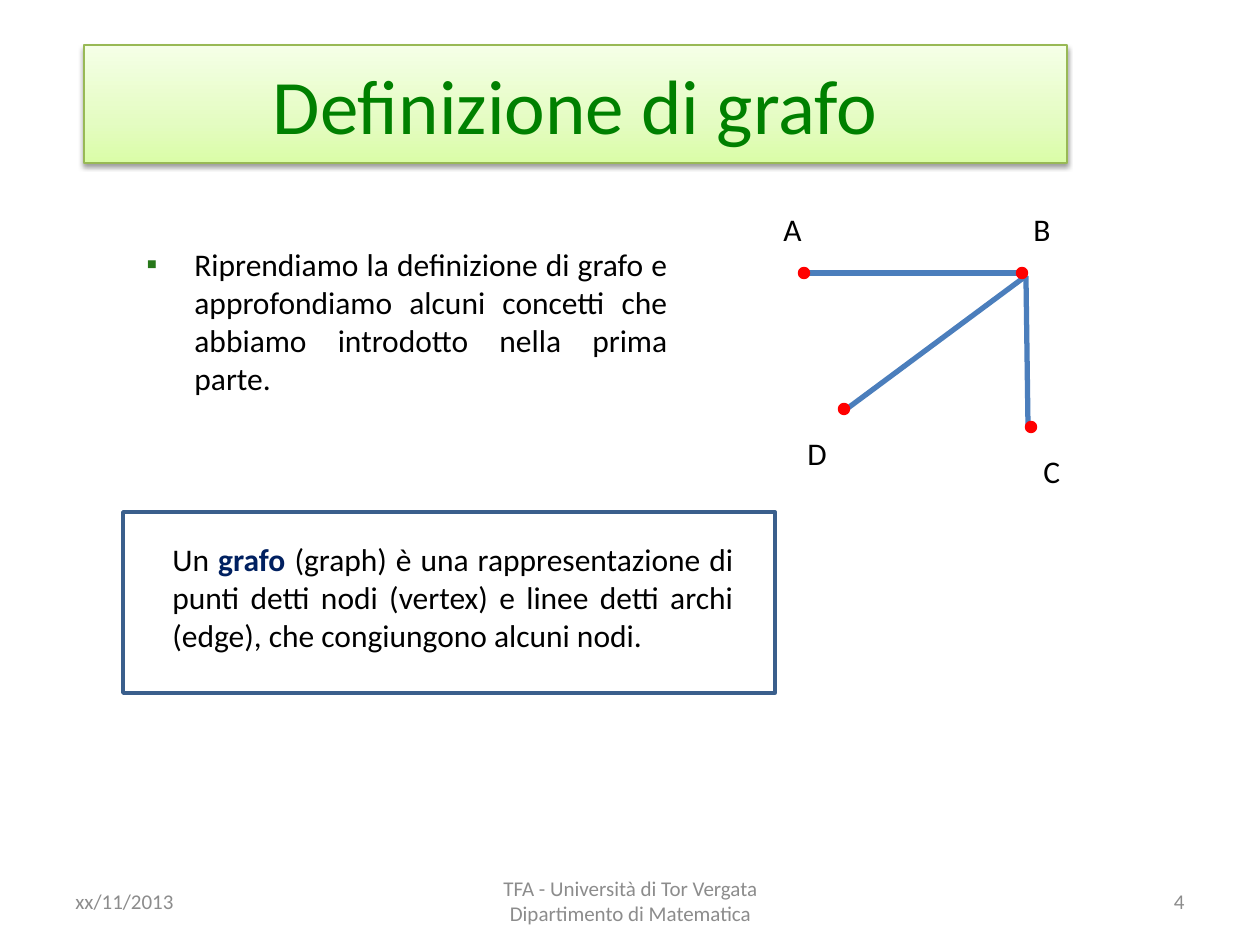
"""Builds the slide that defines a graph, with a small example graph."""
from lxml import etree
from pptx import Presentation
from pptx.dml.color import RGBColor
from pptx.enum.shapes import MSO_CONNECTOR, MSO_SHAPE
from pptx.enum.text import MSO_ANCHOR, MSO_AUTO_SIZE, PP_ALIGN
from pptx.oxml import parse_xml
from pptx.oxml.ns import nsdecls, qn
from pptx.util import Emu, Pt

LEFT, CENTER, RIGHT, JUSTIFY = PP_ALIGN.LEFT, PP_ALIGN.CENTER, PP_ALIGN.RIGHT, PP_ALIGN.JUSTIFY
TOP, MIDDLE = MSO_ANCHOR.TOP, MSO_ANCHOR.MIDDLE
STRAIGHT, RECTANGLE, OVAL = MSO_CONNECTOR.STRAIGHT, MSO_SHAPE.RECTANGLE, MSO_SHAPE.OVAL
TITLE_ONLY = 5
FONT = "Calibri"

COLORS = {
    "text": "000000", "title": "008000", "footer": "8C8C8C", "bullet": "27781A",
    "term": "002060", "edge": "4B7EBC", "frame": "3A5F8C", "node": "FF0000",
    "title line": "98B955",
}
TITLE_STOPS = [(0, "DAFDA7"), (35, "E4FCC2"), (100, "F5FFE7")]

TITLE = ("Definizione di grafo", (84, 45, 983, 118))
INTRO = ("Riprendiamo la definizione di grafo e approfondiamo alcuni concetti "
         "che abbiamo introdotto nella prima parte.", (134, 239, 546, 64))
DEFINITION = [
    ("Un ", "text", False),
    ("grafo ", "term", True),
    ("(graph) è una rappresentazione di punti detti nodi (vertex) e linee detti "
     "archi (edge), che congiungono alcuni nodi.", "text", False),
]
DEFINITION_AREA = (160, 534, 586, 139)
FRAME_AREA = (123, 512, 652, 181)
FOOTERS = [
    ("xx/11/2013", (63, 876, 294, 50), LEFT),
    ("TFA - Università di Tor Vergata\vDipartimento di Matematica", (431, 876, 399, 50), CENTER),
    ("4", (903, 876, 294, 50), RIGHT),
]
LABELS = [("A", 771, 204), ("B", 1021, 204), ("D", 795, 428), ("C", 1031, 446)]
LABEL_SIZE = (43, 50)
EDGES = [(809, 273, 1018, 273), (1026, 276, 1028, 425), (1026, 276, 848, 408)]
NODES = [(1022, 273), (1031, 427), (804, 273), (844, 409)]
NODE_SIZE = 9


def px(*lengths):
    return [Emu(round(length * 914400 / 126)) for length in lengths]


def color(name):
    return RGBColor.from_string(COLORS[name])


def write(shape, text, size=18, ink="text", align=LEFT, anchor=TOP, wrap=True, bullet=None):
    """Fills a shape with one paragraph, given as a string or as (text, ink, bold) spans."""
    frame = shape.text_frame
    frame.auto_size = MSO_AUTO_SIZE.NONE
    frame.word_wrap = wrap
    frame.vertical_anchor = anchor
    para = frame.paragraphs[0]
    para.alignment = align
    if bullet:
        indent = px(48)[0]
        settings = para._p.get_or_add_pPr()
        settings.set("marL", str(indent))
        settings.set("indent", str(-indent))
        bullet_color = etree.SubElement(settings, qn("a:buClr"))
        etree.SubElement(bullet_color, qn("a:srgbClr"), val=COLORS["bullet"])
        etree.SubElement(settings, qn("a:buFont"), typeface="Arial")
        etree.SubElement(settings, qn("a:buChar"), char=bullet)
    spans = [(text, ink, False)] if isinstance(text, str) else text
    for words, span_ink, bold in spans:
        for index, line in enumerate(words.split("\v")):
            if index:
                para.add_line_break()
            span = para.add_run()
            span.text = line
            span.font.name = FONT
            span.font.size = Pt(size)
            span.font.bold = bold
            span.font.color.rgb = color(span_ink)


def add_text(slide, text, area, **style):
    write(slide.shapes.add_textbox(*px(*area)), text, **style)


def add_outline(slide, kind, area, line, fill=None):
    shape = slide.shapes.add_shape(kind, *px(*area))
    shape.shadow.inherit = False
    shape.line.color.rgb = color(line)
    shape.line.width = Pt(2)
    if fill:
        shape.fill.solid()
        shape.fill.fore_color.rgb = color(fill)
    else:
        shape.fill.background()


def add_edge(slide, ends):
    edge = slide.shapes.add_connector(STRAIGHT, *px(*ends))
    edge.line.color.rgb = color("edge")
    edge.line.width = Pt(3)
    etree.SubElement(edge._element.spPr, qn("a:effectLst"))


def style_title(title, text, area):
    title.left, title.top, title.width, title.height = px(*area)
    stops = "".join(f'<a:gs pos="{place * 1000}"><a:srgbClr val="{tint}"/></a:gs>'
                    for place, tint in TITLE_STOPS)
    properties = title._element.spPr
    properties.append(parse_xml(
        f'<a:gradFill {nsdecls("a")} rotWithShape="1"><a:gsLst>{stops}</a:gsLst>'
        '<a:lin ang="16200000" scaled="0"/></a:gradFill>'))
    title.line.color.rgb = color("title line")
    title.line.width = Pt(0.75)
    properties.append(parse_xml(
        f'<a:effectLst {nsdecls("a")}><a:outerShdw blurRad="{Pt(3.1)}" dist="{Pt(1.6)}" '
        'dir="5400000" rotWithShape="0"><a:srgbClr val="000000"><a:alpha val="38000"/>'
        '</a:srgbClr></a:outerShdw></a:effectLst>'))
    write(title, text, size=44, ink="title", align=CENTER, anchor=MIDDLE)


def main():
    deck = Presentation()
    deck.slide_width, deck.slide_height = px(1260, 945)
    slide = deck.slides.add_slide(deck.slide_layouts[TITLE_ONLY])
    style_title(slide.shapes.title, *TITLE)
    for text, area, align in FOOTERS:
        add_text(slide, text, area, size=12, ink="footer", align=align, anchor=MIDDLE)
    add_text(slide, *INTRO, align=JUSTIFY, bullet="▪")
    for text, left, top in LABELS:
        add_text(slide, text, (left, top, *LABEL_SIZE), wrap=False)
    for ends in EDGES:
        add_edge(slide, ends)
    add_text(slide, DEFINITION, DEFINITION_AREA, align=JUSTIFY)
    add_outline(slide, RECTANGLE, FRAME_AREA, "frame")
    for x, y in NODES:
        area = (x - NODE_SIZE / 2, y - NODE_SIZE / 2, NODE_SIZE, NODE_SIZE)
        add_outline(slide, OVAL, area, "node", fill="node")
    deck.save("out.pptx")


if __name__ == "__main__":
    main()
